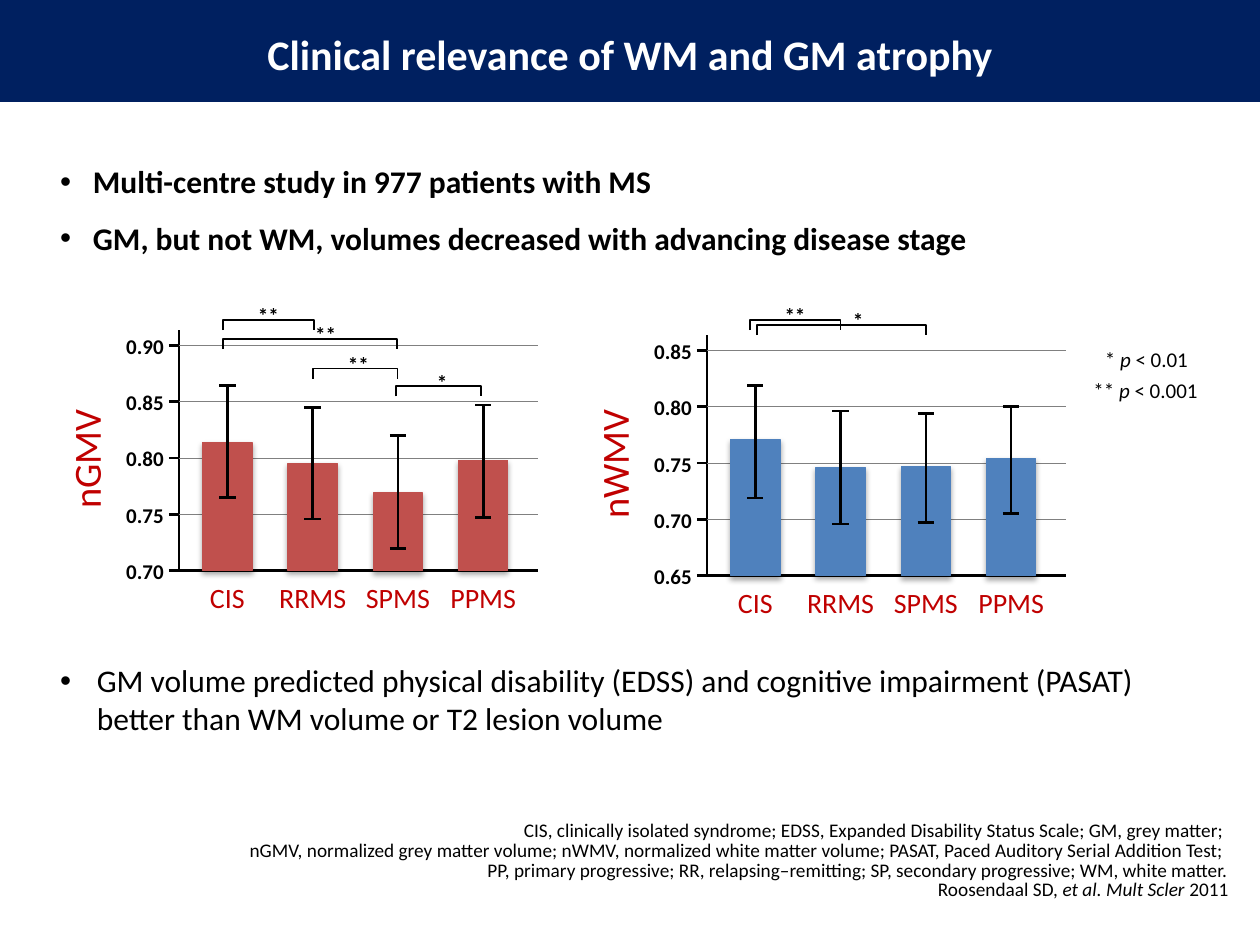
import pptx
import pptx.dml.color
import pptx.enum.shapes
import pptx.enum.text
import pptx.oxml
import pptx.oxml.ns
import pptx.util

RGB = pptx.dml.color.RGBColor
BLACK, WHITE = RGB(0, 0, 0), RGB(255, 255, 255)
NAVY, GREY = RGB(0x00, 0x20, 0x60), RGB(0x80, 0x80, 0x80)
LABEL_RED = RGB(0xC0, 0x00, 0x00)
BAR_RED, BAR_BLUE = RGB(0xC0, 0x50, 0x4D), RGB(0x4F, 0x81, 0xBD)

SHAPE = pptx.enum.shapes.MSO_SHAPE
STRAIGHT = pptx.enum.shapes.MSO_CONNECTOR.STRAIGHT
ANCHOR = pptx.enum.text.MSO_ANCHOR
ALIGN = pptx.enum.text.PP_ALIGN
AUTO_SIZE = pptx.enum.text.MSO_AUTO_SIZE
Pt = pptx.util.Pt

# The slide is a grid of 100 columns by 75 rows of square cells.
COLUMNS, ROWS = 100, 75
CELL = pptx.util.Inches(10) / COLUMNS

STAGES = ("CIS", "RRMS", "SPMS", "PPMS")

# Bars: mean, lower and upper end of the error bar.
# Brackets: start, end, top and label shift, in cells from the plot's corner.
GREY_MATTER = {
    "title": "nGMV", "lowest": 0.70, "color": BAR_RED,
    "bars": ((0.814, 0.765, 0.864), (0.795, 0.746, 0.845),
             (0.769, 0.72, 0.82), (0.798, 0.747, 0.847)),
    "brackets": ((3.5, 10.7, -0.8, 0, "**"), (3.5, 17.3, 0.7, 1.25, "**"),
                 (10.65, 17.35, 3.05, 0.25, "**"), (17.25, 23.95, 4.45, 0.3, "*")),
}
WHITE_MATTER = {
    "title": "nWMV", "lowest": 0.65, "color": BAR_BLUE,
    "bars": ((0.771, 0.719, 0.819), (0.746, 0.696, 0.796),
             (0.747, 0.697, 0.794), (0.754, 0.705, 0.8)),
    "brackets": ((3.4, 10.6, -1.2, 0, "**"), (4, 17.4, -0.8, 1.3, "*")),
}
TICK_STEP, TICKS = 0.05, 5


def cells(*lengths):
    return [round(length * CELL) for length in lengths]


def write(shape, paragraphs, size, color=BLACK, bold=False, align=ALIGN.LEFT,
          anchor=ANCHOR.TOP, inset=None, wrap=False, grow=True, **spacing):
    """Fill a shape with paragraphs, each a list of (text, italic) runs."""
    frame = shape.text_frame
    frame_format = {"word_wrap": wrap, "vertical_anchor": anchor}
    if grow:
        frame_format["auto_size"] = AUTO_SIZE.SHAPE_TO_FIT_TEXT
    if inset is not None:
        for side in ("left", "top", "right", "bottom"):
            frame_format["margin_" + side] = inset
    for name, value in frame_format.items():
        setattr(frame, name, value)
    for index, runs in enumerate(paragraphs):
        paragraph = frame.add_paragraph() if index else frame.paragraphs[0]
        for name, value in {"alignment": align, **spacing}.items():
            if index or name != "space_before":
                setattr(paragraph, name, value)
        for text, italic in runs:
            for line_number, line in enumerate(text.split("\n")):
                if line_number:
                    paragraph.add_line_break()
                run = paragraph.add_run()
                run.text = line
                font_format = {"name": "Calibri", "size": Pt(size),
                               "bold": bold, "italic": italic}
                for name, value in font_format.items():
                    setattr(run.font, name, value)
                run.font.color.rgb = color


def label(shapes, box, text, size, **options):
    write(shapes.add_textbox(*cells(*box)), [[(text, False)]], size, **options)


def rectangle(shapes, box, color):
    shape = shapes.add_shape(SHAPE.RECTANGLE, *cells(*box))
    shape.shadow.inherit = False
    shape.fill.solid()
    shape.fill.fore_color.rgb = color
    shape.line.fill.background()
    return shape


def rule(shapes, ends, color=BLACK, width=1.5):
    connector = shapes.add_connector(STRAIGHT, *cells(*ends))
    connector.line.color.rgb = color
    connector.line.width = Pt(width)
    properties = connector._element.spPr
    properties.append(pptx.oxml.parse_xml(
        "<a:effectLst %s/>" % pptx.oxml.ns.nsdecls("a")))


def cast_shadow(shape):
    effects = shape._element.spPr.find(pptx.oxml.ns.qn("a:effectLst"))
    effects.append(pptx.oxml.parse_xml(
        '<a:outerShdw %s blurRad="40000" dist="23000" dir="5400000" rotWithShape="0">'
        '<a:srgbClr val="000000"><a:alpha val="35000"/></a:srgbClr>'
        "</a:outerShdw>" % pptx.oxml.ns.nsdecls("a")))


def bullet_list(shapes, box, items, indent, before, after, bold):
    body = shapes.add_textbox(*cells(*box))
    write(body, [[(item, False)] for item in items], 18, bold=bold, wrap=True,
          grow=False, space_before=Pt(before), space_after=Pt(after))
    for paragraph in body.text_frame.paragraphs:
        properties = paragraph._p.get_or_add_pPr()
        properties.set("marL", str(cells(indent)[0]))
        properties.set("indent", str(-cells(indent)[0]))
        properties.append(pptx.oxml.parse_xml(
            '<a:buFont %s typeface="Arial"/>' % pptx.oxml.ns.nsdecls("a")))
        properties.append(pptx.oxml.parse_xml(
            '<a:buChar %s char="•"/>' % pptx.oxml.ns.nsdecls("a")))


def axes(shapes, box, data, height_of):
    left, top, width, height = box
    right, bottom = left + width, top + height
    title = rectangle(shapes, (left - 12, top + 8.4, 9.2, 3.7), WHITE)
    title.rotation = 270
    write(title, [[(data["title"], False)]], 22, color=LABEL_RED,
          align=ALIGN.CENTER, inset=0, grow=False)

    outline = shapes.build_freeform(*cells(left, top))
    outline.add_line_segments([cells(left, bottom), cells(right, bottom)], close=False)
    frame = outline.convert_to_shape()
    frame.shadow.inherit = False
    frame.fill.background()
    frame.line.color.rgb = BLACK
    frame.line.width = Pt(1.5)

    for tick in range(TICKS):
        value = data["lowest"] + tick * TICK_STEP
        y = height_of(value)
        if tick:
            rule(shapes, (left, y, right, y), GREY, 0.5)
        rule(shapes, (left - 0.8, y, left, y))
        label(shapes, (left - 4.2, y - 0.95, 3, 2), f"{value:.2f}", 12, bold=True,
              align=ALIGN.RIGHT, anchor=ANCHOR.MIDDLE, inset=0)


def bar_with_error(shapes, center, bottom, mean_y, low_y, high_y, color):
    bar = rectangle(shapes, (center - 1.95, mean_y, 3.9, bottom - mean_y), color)
    bar.line.color.rgb = color
    bar.line.width = Pt(0.75)
    cast_shadow(bar)
    for y in (high_y, low_y):
        rule(shapes, (center - 0.65, y, center + 0.65, y))
    rule(shapes, (center, low_y, center, high_y))


def significance(shapes, start, end, top, shift, stars):
    """Bracket from start to end, opening downwards, with its stars above."""
    depth, span, middle = 0.8, end - start, (start + end) / 2
    bracket = shapes.add_shape(SHAPE.LEFT_BRACKET, *cells(
        middle - depth / 2, top + depth / 2 - span / 2, depth, span))
    bracket.adjustments[0] = 0
    bracket.rotation = 90
    bracket.shadow.inherit = False
    bracket.fill.background()
    bracket.line.color.rgb = BLACK
    bracket.line.width = Pt(1)
    width = 0.85 * len(stars)
    label(shapes, (middle + shift - width / 2, top - 1.35, width, 2), stars, 12,
          bold=True, align=ALIGN.CENTER, anchor=ANCHOR.MIDDLE, inset=0)


def volume_plot(slide, box, data):
    shapes = slide.shapes.add_group_shape().shapes
    left, top, width, height = box
    bottom = top + height
    tick_gap = (height - 1.2) / (TICKS - 1)

    def height_of(value):
        return bottom - (value - data["lowest"]) / TICK_STEP * tick_gap

    axes(shapes, box, data, height_of)
    for index, (stage, bar) in enumerate(zip(STAGES, data["bars"])):
        center = left + width * (0.135 + 0.2375 * index)
        label(shapes, (center - 2.7, bottom + 0.8, 5.4, 2.7), stage, 16,
              color=LABEL_RED, align=ALIGN.CENTER, inset=0)
        bar_with_error(shapes, center, bottom, *map(height_of, bar), data["color"])
    for start, end, offset, shift, stars in data["brackets"]:
        significance(shapes, left + start, left + end, top + offset, shift, stars)


def p_value_key(slide, rows):
    shapes = slide.shapes.add_group_shape().shapes
    for box, stars, limit in rows:
        write(shapes.add_textbox(*cells(*box)),
              [[(stars + " ", False), ("p ", True), (limit, False)]], 12)


def footnote(slide, box):
    abbreviations = (
        "CIS, clinically isolated syndrome; EDSS, Expanded Disability Status Scale; GM, grey matter; \n"
        "nGMV, normalized grey matter volume; nWMV, normalized white matter volume; "
        "PASAT, Paced Auditory Serial Addition Test; \n"
        "PP, primary progressive; RR, relapsing–remitting; SP, secondary progressive; WM, white matter.")
    citation = [("Roosendaal SD, ", False), ("et al. Mult Scler ", True), ("2011", False)]
    write(slide.shapes.add_textbox(*cells(*box)), [[(abbreviations, False)], citation], 11,
          align=ALIGN.RIGHT, anchor=ANCHOR.BOTTOM, inset=0, line_spacing=0.85)


def title_band(slide, width, height):
    rectangle(slide.shapes, (0, 0, width, height), NAVY)
    label(slide.shapes, (0, 1.8, width, 9.5), "Clinical relevance of WM and GM atrophy", 24,
          color=WHITE, bold=True, align=ALIGN.CENTER, wrap=True, grow=False)


def main():
    deck = pptx.Presentation()
    deck.slide_width, deck.slide_height = cells(COLUMNS, ROWS)
    slide = deck.slides.add_slide(deck.slide_layouts[6])
    bullet_list(slide.shapes, (3.8, 12.4, 91.4, 6.5), (
        "Multi-centre study in 977 patients with MS",
        "GM, but not WM, volumes decreased with advancing disease stage",
    ), 2.6, 8, 2.6, True)
    footnote(slide, (18.3, 65.2, 79.2, 6.3))
    p_value_key(slide, (((86.7, 27, 8.7, 3), "*", "< 0.01"),
                        ((85.8, 29.5, 10.4, 3), "**", "< 0.001")))
    bullet_list(slide.shapes, (3.8, 52, 92.6, 8.2), (
        "GM volume predicted physical disability (EDSS) and cognitive impairment (PASAT) "
        "better than WM volume or T2 lesion volume",
    ), 2.9, 9, 3, False)
    volume_plot(slide, (56.1, 26.6, 28.5, 19.1), WHITE_MATTER)
    volume_plot(slide, (14.2, 26.2, 28.5, 19.1), GREY_MATTER)
    title_band(slide, COLUMNS, 8.1)
    deck.save("out.pptx")


if __name__ == "__main__":
    main()
